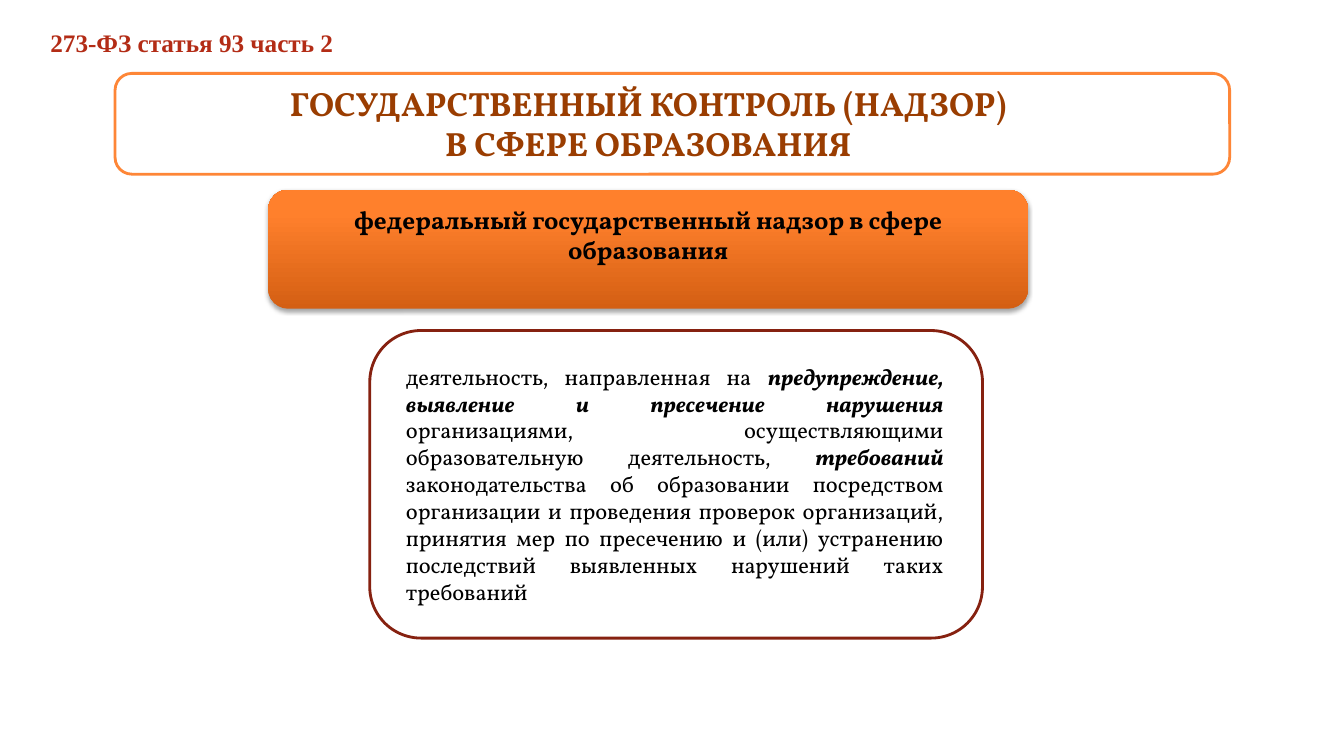
from lxml import etree
from pptx import Presentation
from pptx import util as u
from pptx.dml.color import RGBColor
from pptx.enum import shapes, text
from pptx.oxml.ns import qn

COLORS = {
    "white": "FFFFFF", "black": "000000", "orange": "FE8637", "maroon": "862110",
    "red": "B32C16", "brown": "9A3D01", "grad_dark": "D45F13",
    "grad_mid": "FF802C", "grad_light": "FF812E",
}
SERIF = "Vollkorn"
ALIGN = text.PP_ALIGN


def rgb(name):
    return RGBColor.from_string(COLORS[name])


def place(sp, left, top, width, height):
    sp.left, sp.top, sp.width, sp.height = map(u.Cm, (left, top, width, height))


def add_round_box(s, box, line=None, fill=None):
    sp = s.shapes.add_shape(shapes.MSO_SHAPE.ROUNDED_RECTANGLE, *map(u.Cm, box))
    sp.shadow.inherit = False
    if fill:
        sp.fill.solid()
        sp.fill.fore_color.rgb = rgb(fill)
    else:
        sp.fill.background()
    if line:
        sp.line.color.rgb = rgb(line)
        sp.line.width = u.Pt(2)
    else:
        sp.line.fill.background()
    return sp


def add_color(parent, name):
    return etree.SubElement(parent, qn("a:srgbClr"), val=COLORS[name])


def set_gradient(sp, stops, angle):
    sp.fill.gradient()
    sp.fill.gradient_angle = angle
    gs_list = sp.element.spPr.find(qn("a:gradFill")).find(qn("a:gsLst"))
    for gs in list(gs_list):
        gs_list.remove(gs)
    for pos, name in stops:
        add_color(etree.SubElement(gs_list, qn("a:gs"), pos=str(pos * 1000)), name)


def set_shadow(sp, blur, dist, alpha):
    effects = sp.element.spPr.find(qn("a:effectLst"))
    shadow = etree.SubElement(
        effects, qn("a:outerShdw"), blurRad=str(u.Pt(blur)), dist=str(u.Pt(dist)),
        dir="5400000", rotWithShape="0")
    etree.SubElement(add_color(shadow, "black"), qn("a:alpha"), val=str(alpha * 1000))


def write(sp, paragraphs, size, color, font=SERIF, align=ALIGN.CENTER,
          anchor=text.MSO_ANCHOR.TOP, wrap=True):
    tf = sp.text_frame
    tf.word_wrap = wrap
    tf.vertical_anchor = anchor
    for i, runs in enumerate(paragraphs):
        p = tf.add_paragraph() if i else tf.paragraphs[0]
        p.alignment = align
        for content, bold, italic in runs:
            r = p.add_run()
            r.text = content
            r.font.name = font
            r.font.size = u.Pt(size)
            r.font.bold = bold
            r.font.italic = italic
            r.font.color.rgb = rgb(color)
    return tf


def add_text(s, box, paragraphs, size, color, **options):
    sp = s.shapes.add_textbox(*map(u.Cm, box))
    tf = write(sp, paragraphs, size, color, **options)
    tf.auto_size = text.MSO_AUTO_SIZE.SHAPE_TO_FIT_TEXT


def add_title(s, box, lines):
    title = s.shapes.title
    place(title, *box)
    title.element.getparent().append(title.element)
    tf = write(title, [[(line, True, False)] for line in lines], 24, "brown")
    tf.auto_size = text.MSO_AUTO_SIZE.NONE


def add_supervision_box(s, box, label):
    sp = add_round_box(s, box)
    set_gradient(sp, [(0, "grad_dark"), (80, "grad_mid"), (100, "grad_light")], 90)
    set_shadow(sp, 3.1, 1.8, 35)
    tf = write(sp, [[(label, True, False)]], 18, "black", anchor=text.MSO_ANCHOR.MIDDLE)
    tf.margin_bottom = u.Cm(0.87)


def main():
    prs = Presentation()
    prs.slide_width, prs.slide_height = u.Cm(33.87), u.Cm(19.05)
    s = prs.slides.add_slide(prs.slide_layouts[5])

    add_round_box(s, (2.9, 1.85, 28.09, 2.54), line="orange", fill="white")
    add_supervision_box(s, (6.76, 4.78, 19.15, 3),
                        "федеральный государственный надзор в сфере образования")
    add_round_box(s, (9.32, 8.33, 15.44, 7.75), line="maroon")
    add_text(s, (1.02, 0.56, 7.87, 1.02), [[("273-ФЗ статья 93 часть 2", True, False)]],
             18, "red", font="Times New Roman", align=ALIGN.LEFT, wrap=False)
    add_title(s, (6.76, 1.96, 19.15, 2.31),
              ["ГОСУДАРСТВЕННЫЙ КОНТРОЛЬ (НАДЗОР)", "В СФЕРЕ ОБРАЗОВАНИЯ"])
    definition = [
        ("деятельность, направленная на ", False, False),
        ("предупреждение, выявление и пресечение нарушения ", True, True),
        ("организациями, осуществляющими образовательную деятельность, ", False, False),
        ("требований", True, True),
        (" законодательства об образовании посредством организации и проведения "
         "проверок организаций, принятия мер по пресечению и (или) устранению "
         "последствий выявленных нарушений таких требований", False, False),
    ]
    add_text(s, (9.98, 9.02, 14.05, 6.4), [definition], 16, "black", align=ALIGN.JUSTIFY)

    prs.save("out.pptx")


if __name__ == "__main__":
    main()
